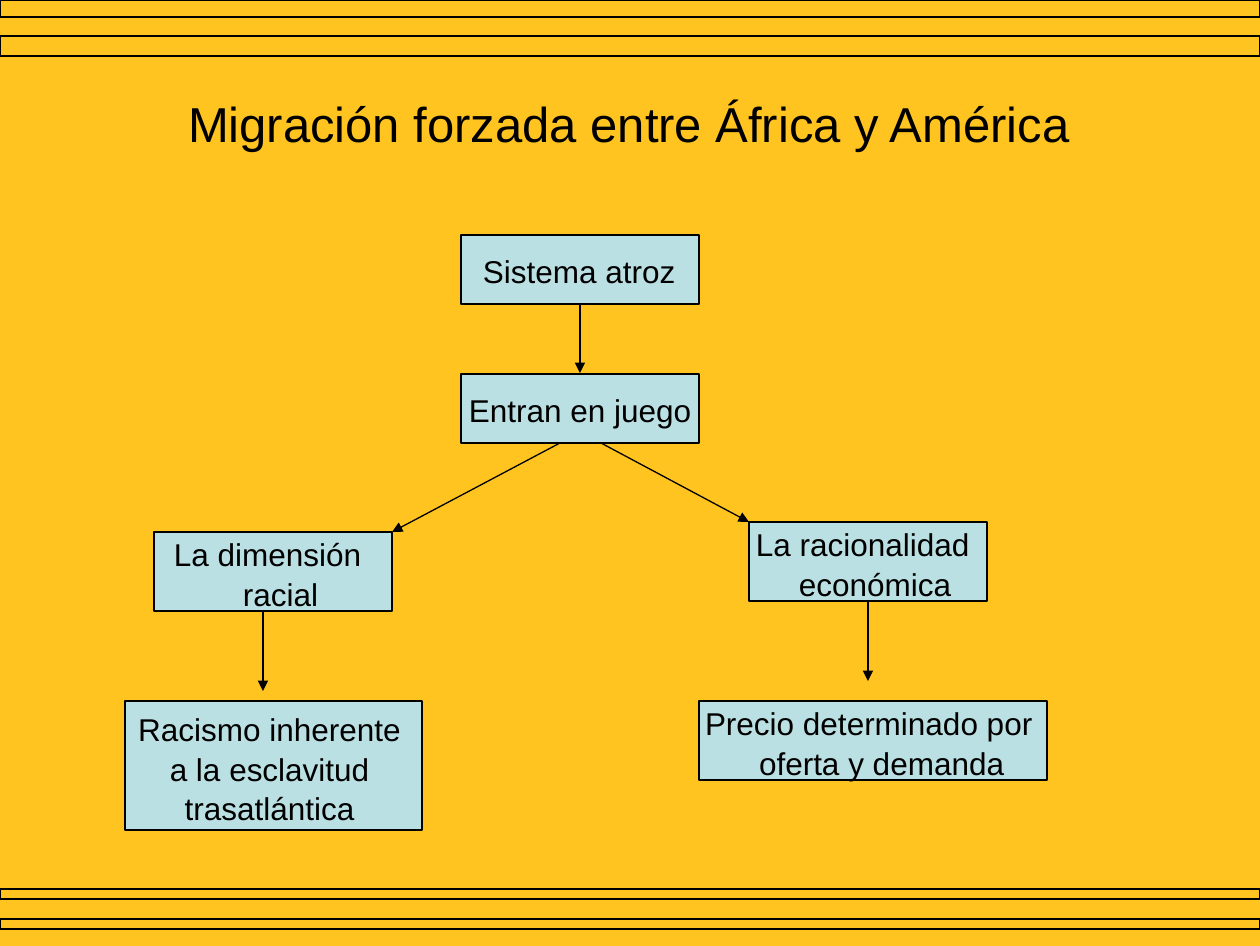
"""Build a flow diagram slide on forced migration between Africa and America."""
from lxml.etree import SubElement
from pptx import Presentation
from pptx.dml.color import RGBColor
from pptx.enum.shapes import MSO_CONNECTOR, MSO_SHAPE
from pptx.enum.text import MSO_ANCHOR, MSO_AUTO_SIZE, PP_ALIGN
from pptx.oxml.ns import qn
from pptx.util import Pt

EMU_PER_PX = 914400 / 126
BLACK, YELLOW, PALE_BLUE = "000000", "FFC41F", "BBE0E3"


def px(*lengths):
    return [round(length * EMU_PER_PX) for length in lengths]


def paint(color_format, value):
    color_format.rgb = RGBColor.from_string(value)


deck = Presentation()
deck.slide_width, deck.slide_height = px(1260, 946)
page = deck.slides.add_slide(deck.slide_layouts[5])
page.background.fill.solid()
paint(page.background.fill.fore_color, YELLOW)

for top, height in [(0, 17), (36, 20), (889, 10), (919, 10)]:
    stripe = page.shapes.add_shape(MSO_SHAPE.RECTANGLE, *px(0, top, 1260, height))
    stripe.shadow.inherit = False
    stripe.fill.background()
    paint(stripe.line.color, BLACK)
    stripe.line.width = Pt(0.75)

labels = []
title = page.shapes.title
title.left, title.top, title.width, title.height = px(96, 57, 1071, 118)
labels.append((title, "Migración forzada entre África y América", 28, PP_ALIGN.LEFT, (92, 34, 0), 0))

LEFT, CENTER = PP_ALIGN.LEFT, PP_ALIGN.CENTER
boxes = [
    ("Sistema atroz", (461, 235, 238, 69), LEFT, (22, 16, 0), 0),
    ("Entran en juego", (461, 374, 238, 69), LEFT, (8, 16, 0), 0),
    ("La dimensión racial", (154, 532, 238, 79), LEFT, (20, 2, 0), 69),
    ("La racionalidad económica", (749, 522, 238, 79), LEFT, (7, 2, 0), 43),
    ("Racismo inherente a la esclavitud trasatlántica", (125, 701, 297, 129), CENTER, (12, 8, 20), 0),
    ("Precio determinado por oferta y demanda", (699, 701, 348, 79), LEFT, (6, 2, 0), 54),
]
for text, frame, align, insets, hang in boxes:
    box = page.shapes.add_shape(MSO_SHAPE.RECTANGLE, *px(*frame))
    box.shadow.inherit = False
    box.fill.solid()
    paint(box.fill.fore_color, PALE_BLUE)
    paint(box.line.color, BLACK)
    box.line.width = Pt(0.75)
    labels.append((box, text, 18, align, insets, hang))

for shape, text, size, align, insets, hang in labels:
    frame = shape.text_frame
    frame.word_wrap = True
    frame.auto_size = MSO_AUTO_SIZE.NONE
    frame.vertical_anchor = MSO_ANCHOR.TOP
    frame.margin_left, frame.margin_top, frame.margin_right = px(*insets)
    frame.margin_bottom = 0
    para = frame.paragraphs[0]
    para.alignment = align
    para.line_spacing = 1.04
    if hang:
        properties = para._p.get_or_add_pPr()
        margin, indent = px(hang, -hang)
        properties.set("marL", str(margin))
        properties.set("indent", str(indent))
    span = para.add_run()
    span.text = text
    span.font.name = "Arial"
    span.font.size = Pt(size)
    paint(span.font.color, BLACK)

arrows = [
    (580, 304, 580, 373),
    (560, 443, 392, 532),
    (601, 443, 749, 522),
    (263, 611, 263, 691),
    (868, 601, 868, 681),
]
for ends in arrows:
    arrow = page.shapes.add_connector(MSO_CONNECTOR.STRAIGHT, *px(*ends))
    paint(arrow.line.color, BLACK)
    arrow.line.width = Pt(0.75)
    outline = arrow.line._get_or_add_ln()
    SubElement(outline, qn("a:tailEnd"), type="triangle", w="med", len="med")
    SubElement(arrow._element.spPr, qn("a:effectLst"))

deck.save("out.pptx")
